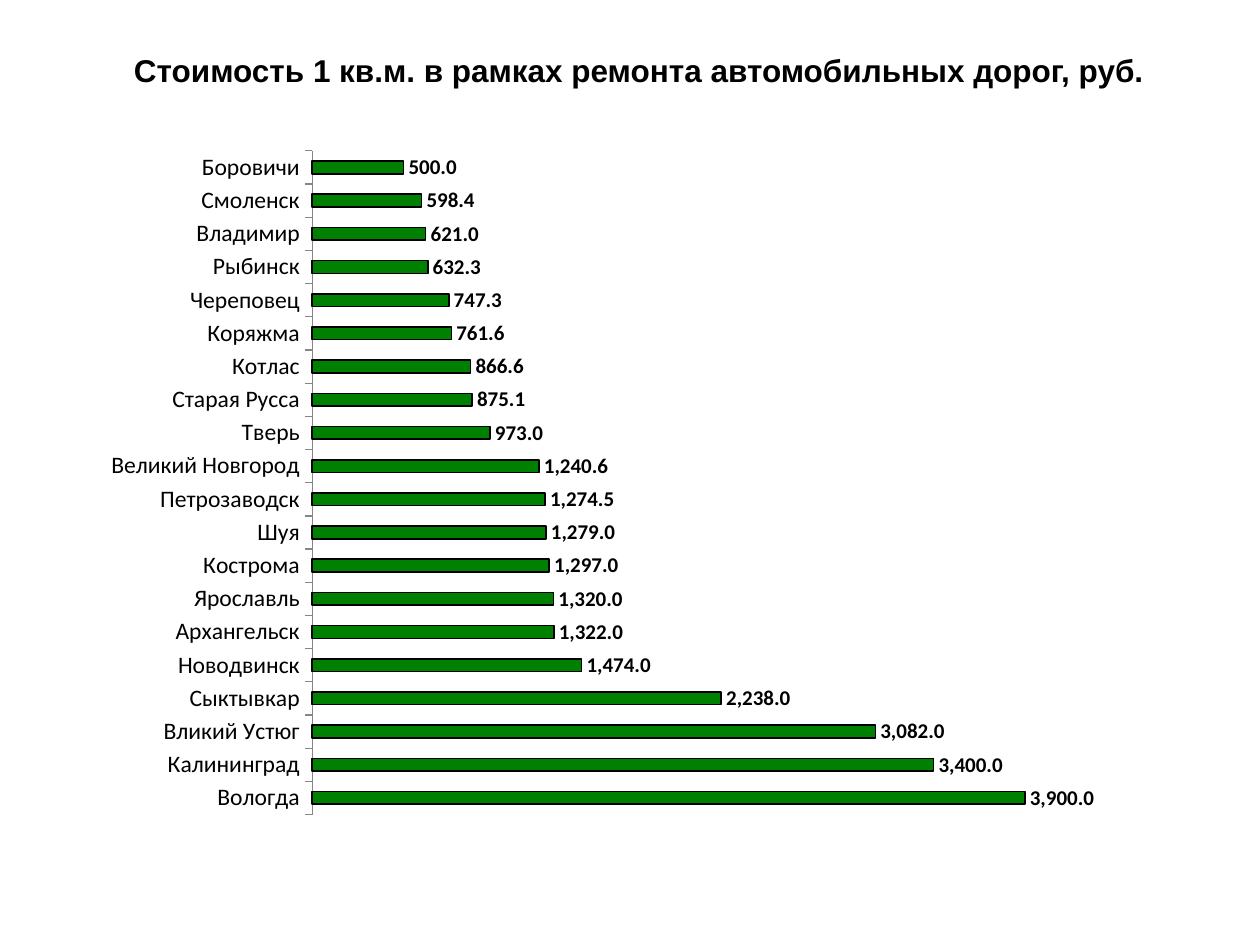
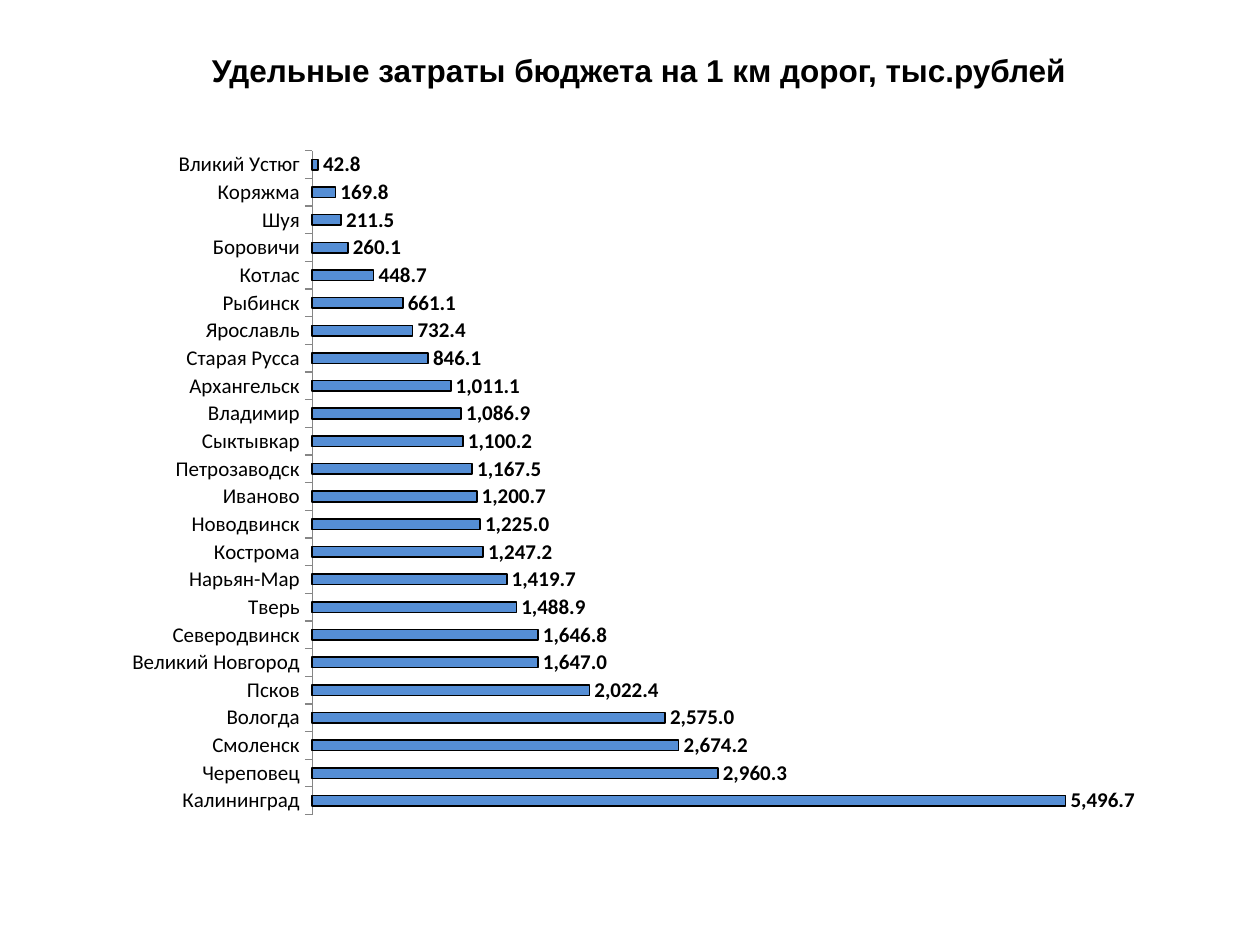
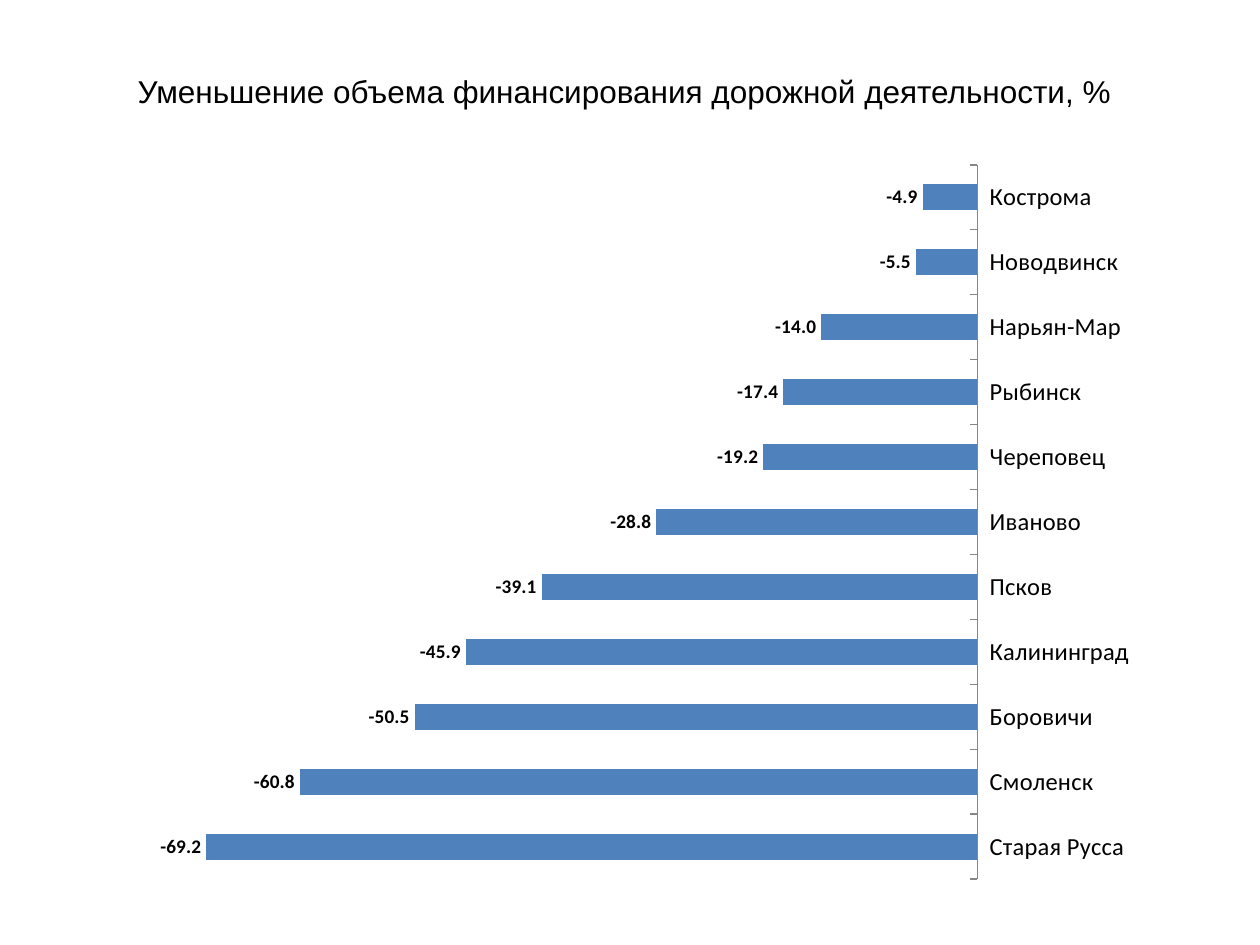
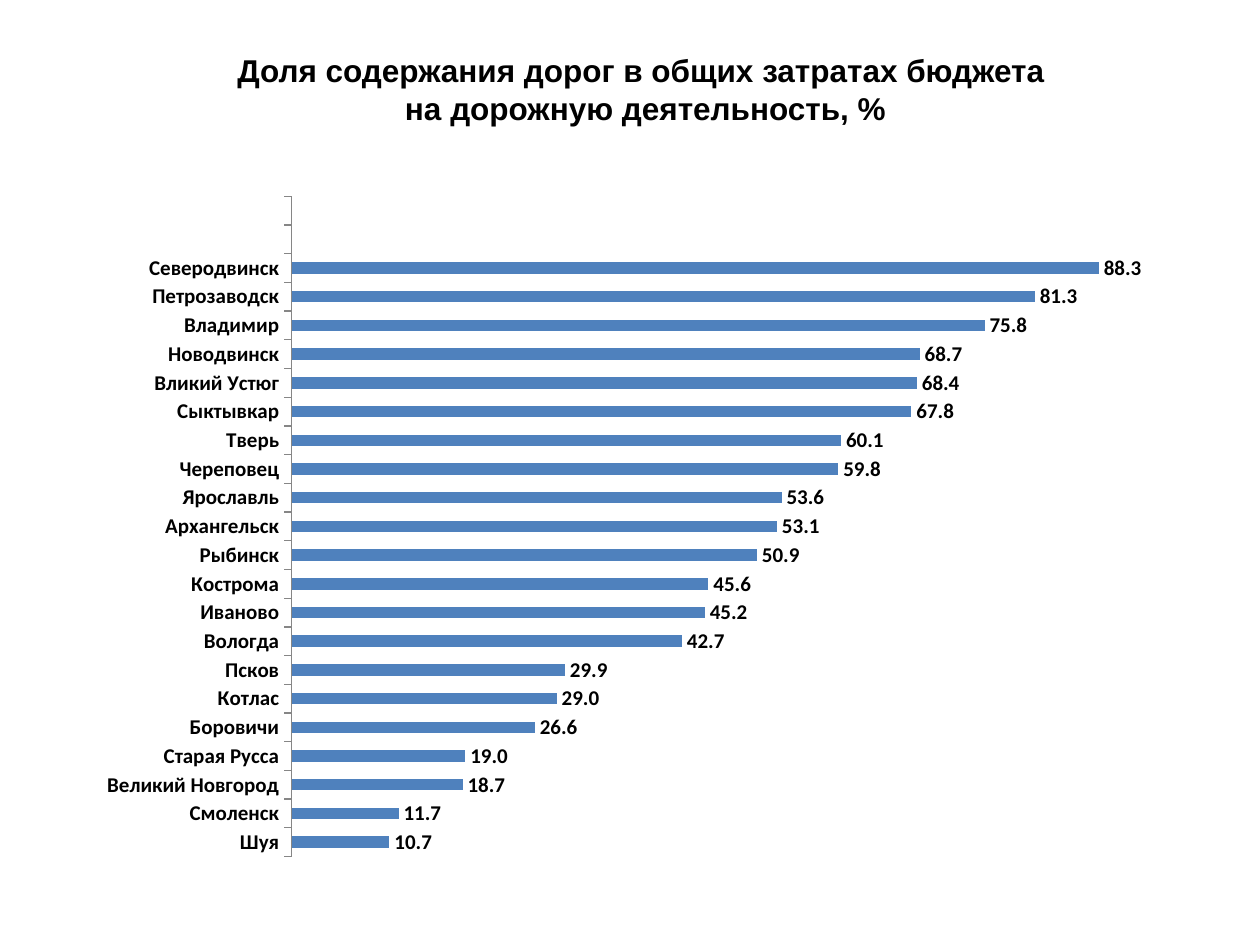
from dataclasses import dataclass

from lxml.etree import SubElement
from pptx import Presentation
from pptx.chart.data import CategoryChartData
from pptx.dml.color import RGBColor
from pptx.enum.chart import XL_CHART_TYPE, XL_LABEL_POSITION, XL_TICK_LABEL_POSITION
from pptx.enum.text import MSO_ANCHOR, MSO_AUTO_SIZE, PP_ALIGN
from pptx.oxml.ns import qn
from pptx.util import Inches, Pt

WIDE, HIGH = 1260, 945
SCALE = Inches(10) / WIDE


# Shared colours, fonts and type sizes
@dataclass(frozen=True)
class Theme:
    ink: RGBColor = RGBColor(0, 0, 0)
    axis: RGBColor = RGBColor(0x86, 0x86, 0x86)
    green: RGBColor = RGBColor(0, 0x80, 0)
    sky: RGBColor = RGBColor(0x55, 0x8E, 0xD5)
    blue: RGBColor = RGBColor(0x4F, 0x81, 0xBD)
    head: str = "Arial"
    body: str = "Calibri"
    title: float = 18
    large: float = 14
    mid: float = 13.5
    base: float = 12
    small: float = 11
    edge: float = 0.88


THEME = Theme()


# How one bar chart looks
@dataclass(frozen=True)
class Look:
    fill: RGBColor
    plot: tuple
    span: tuple
    city: float = THEME.base
    label: float = THEME.base
    bold: bool = False
    edged: bool = False
    gap: int = 150
    lap: int = 0
    form: str = "#,##0.0"
    right: bool = False


# City and value, from the bottom bar up
REPAIR = [
    ("Вологда", 3900), ("Калининград", 3400), ("Вликий Устюг", 3082),
    ("Сыктывкар", 2238), ("Новодвинск", 1474), ("Архангельск", 1322),
    ("Ярославль", 1320), ("Кострома", 1297), ("Шуя", 1279),
    ("Петрозаводск", 1274.5), ("Великий Новгород", 1240.6), ("Тверь", 973),
    ("Старая Русса", 875.1), ("Котлас", 866.6), ("Коряжма", 761.6),
    ("Череповец", 747.3), ("Рыбинск", 632.3), ("Владимир", 621),
    ("Смоленск", 598.4), ("Боровичи", 500),
]
SPEND = [
    ("Калининград", 5496.7), ("Череповец", 2960.3), ("Смоленск", 2674.2),
    ("Вологда", 2575), ("Псков", 2022.4), ("Великий Новгород", 1647),
    ("Северодвинск", 1646.8), ("Тверь", 1488.9), ("Нарьян-Мар", 1419.7),
    ("Кострома", 1247.2), ("Новодвинск", 1225), ("Иваново", 1200.7),
    ("Петрозаводск", 1167.5), ("Сыктывкар", 1100.2), ("Владимир", 1086.9),
    ("Архангельск", 1011.1), ("Старая Русса", 846.1), ("Ярославль", 732.4),
    ("Рыбинск", 661.1), ("Котлас", 448.7), ("Боровичи", 260.1),
    ("Шуя", 211.5), ("Коряжма", 169.8), ("Вликий Устюг", 42.8),
]
CUTS = [
    ("Старая Русса", -69.2), ("Смоленск", -60.8), ("Боровичи", -50.5),
    ("Калининград", -45.9), ("Псков", -39.1), ("Иваново", -28.8),
    ("Череповец", -19.2), ("Рыбинск", -17.4), ("Нарьян-Мар", -14),
    ("Новодвинск", -5.5), ("Кострома", -4.9),
]
SHARE = [
    ("Шуя", 10.7), ("Смоленск", 11.7), ("Великий Новгород", 18.7),
    ("Старая Русса", 19), ("Боровичи", 26.6), ("Котлас", 29),
    ("Псков", 29.9), ("Вологда", 42.7), ("Иваново", 45.2),
    ("Кострома", 45.6), ("Рыбинск", 50.9), ("Архангельск", 53.1),
    ("Ярославль", 53.6), ("Череповец", 59.8), ("Тверь", 60.1),
    ("Сыктывкар", 67.8), ("Вликий Устюг", 68.4), ("Новодвинск", 68.7),
    ("Владимир", 75.8), ("Петрозаводск", 81.3), ("Северодвинск", 88.3),
    ("", None), ("", None),
]


def px(*sizes):
    return [round(size * SCALE) for size in sizes]


def set_font(font, name, size, bold):
    font.name, font.size, font.bold = name, Pt(size), bold
    font.color.rgb = THEME.ink


def add_title(slide, text, box, bold=True):
    title = slide.shapes.title
    title.left, title.top, title.width, title.height = px(*box)
    frame = title.text_frame
    frame.text = text
    frame.word_wrap = True
    frame.vertical_anchor = MSO_ANCHOR.TOP
    frame.auto_size = MSO_AUTO_SIZE.SHAPE_TO_FIT_TEXT
    for para in frame.paragraphs:
        para.alignment = PP_ALIGN.CENTER
        set_font(para.font, THEME.head, THEME.title, bold)


def place_plot(chart, plot):
    """Fix the inner plot area as shares of the chart frame."""
    area = chart.element.find(".//" + qn("c:plotArea"))
    for old in area.findall(qn("c:layout")):
        area.remove(old)
    layout = SubElement(area, qn("c:layout"))
    area.insert(0, layout)
    manual = SubElement(layout, qn("c:manualLayout"))
    marks = [("layoutTarget", "inner"), ("xMode", "edge"), ("yMode", "edge")]
    for tag, val in marks + list(zip("xywh", plot)):
        SubElement(manual, qn("c:" + tag)).set("val", str(val))


def add_bars(slide, rows, box, look):
    data = CategoryChartData(number_format=look.form)
    data.categories = [city for city, _ in rows]
    data.add_series("Series 1", [value for _, value in rows])
    chart = slide.shapes.add_chart(
        XL_CHART_TYPE.BAR_CLUSTERED, *px(*box), data).chart
    chart.has_legend = chart.has_title = False
    set_font(chart.font, THEME.body, THEME.large, False)
    place_plot(chart, look.plot)

    # Axes
    cats, scale = chart.category_axis, chart.value_axis
    set_font(cats.tick_labels.font, THEME.body, look.city, look.bold)
    cats.format.line.color.rgb = THEME.axis
    if look.right:
        cats.tick_label_position = XL_TICK_LABEL_POSITION.HIGH
    scale.minimum_scale, scale.maximum_scale = look.span
    scale.has_major_gridlines = False
    scale.visible = False

    # Bars
    plot = chart.plots[0]
    plot.vary_by_categories = False
    plot.gap_width, plot.overlap = look.gap, look.lap
    bars = plot.series[0]
    bars.invert_if_negative = False
    bars.format.fill.solid()
    bars.format.fill.fore_color.rgb = look.fill
    if look.edged:
        bars.format.line.color.rgb = THEME.ink
        bars.format.line.width = Pt(THEME.edge)

    # Value labels
    labels = bars.data_labels
    labels.show_value = True
    labels.number_format = look.form
    labels.number_format_is_linked = False
    labels.position = XL_LABEL_POSITION.OUTSIDE_END
    set_font(labels.font, THEME.body, look.label, True)


def main():
    deck = Presentation()
    deck.slide_width, deck.slide_height = px(WIDE, HIGH)

    def new_slide():
        return deck.slides.add_slide(deck.slide_layouts[5])

    # Two cost charts with one frame
    edged = dict(plot=(0.214, 0.008, 0.709, 0.891), edged=True, gap=162, lap=-68)
    costs = [
        ("Стоимость 1 кв.м. в рамках ремонта автомобильных дорог, руб.", REPAIR,
         Look(THEME.green, span=(0, 4500), city=THEME.mid, **edged)),
        ("Удельные затраты бюджета на 1 км дорог, тыс.рублей", SPEND,
         Look(THEME.sky, span=(0, 6000), **edged)),
    ]
    for text, rows, look in costs:
        slide = new_slide()
        add_title(slide, text, (64, 45, 1150, 51))
        add_bars(slide, rows, (64, 145, 1160, 745), look)

    # Funding cuts
    slide = new_slide()
    add_title(slide, "Уменьшение объема финансирования дорожной деятельности, %",
              (74, 66, 1101, 51), bold=False)
    add_bars(slide, CUTS, (84, 125, 1121, 784),
             Look(THEME.blue, (0.002, 0.051, 0.795, 0.911), (-80, 0),
                  city=THEME.large, label=THEME.small, right=True))

    # Share of upkeep
    slide = new_slide()
    add_title(slide, "Доля содержания дорог в общих затратах бюджета \n"
              "на дорожную деятельность, %", (95, 45, 1101, 89))
    add_bars(slide, SHARE, (95, 193, 1111, 667),
             Look(THEME.blue, (0.177, 0.005, 0.823, 0.99), (0, 100),
                  bold=True, form="0.0"))

    deck.save("out.pptx")


if __name__ == "__main__":
    main()
